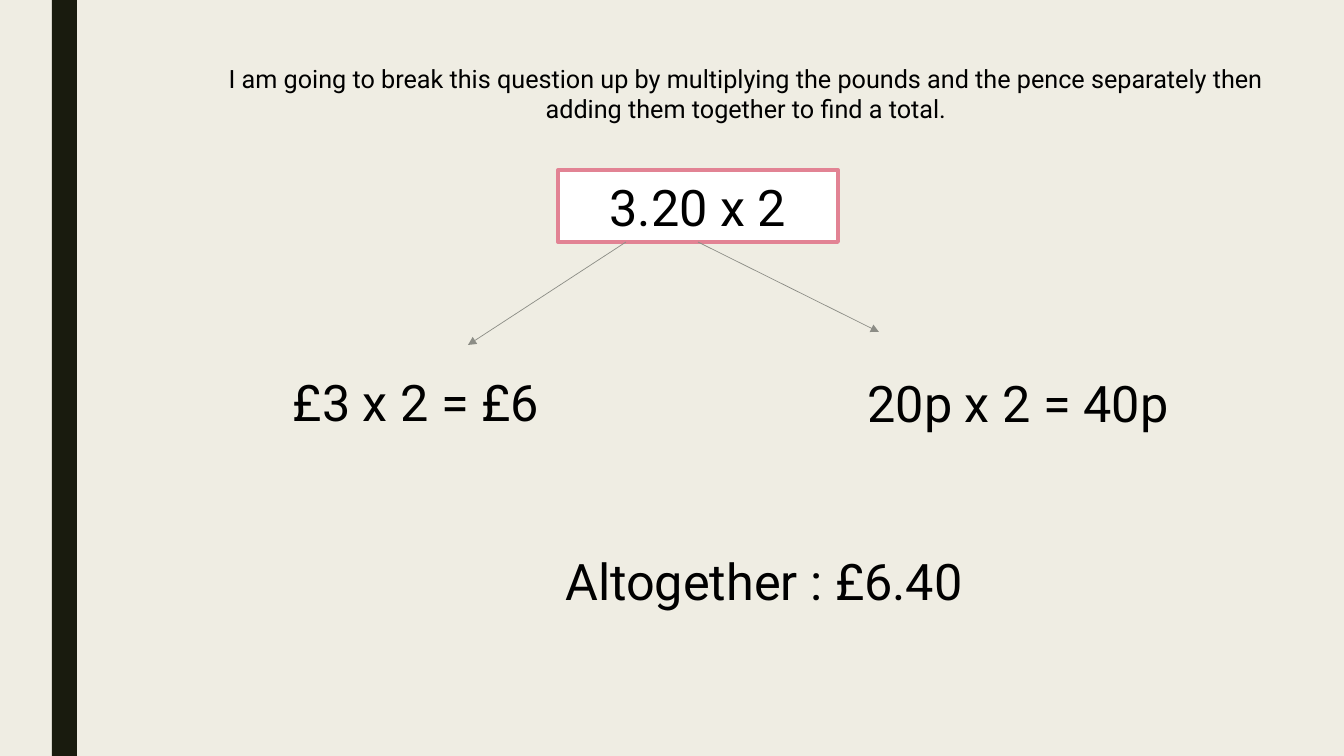
from lxml.etree import SubElement
from pptx import Presentation
from pptx.dml.color import RGBColor
from pptx.enum.shapes import MSO_CONNECTOR, MSO_SHAPE
from pptx.enum.text import MSO_ANCHOR, PP_ALIGN
from pptx.oxml.ns import qn
from pptx.util import Emu, Pt

SLIDE_W, SLIDE_H = 1344, 756
ROW_H = 72
FONT = "Roboto"


def px(n):
    return Emu(round(n * 914400 / 100.8))


def rgb(code):
    return RGBColor.from_string(code)


def add_rect(s, box, fill, line=None, width=0):
    sp = s.shapes.add_shape(MSO_SHAPE.RECTANGLE, *map(px, box))
    sp.shadow.inherit = False
    sp.fill.solid()
    sp.fill.fore_color.rgb = rgb(fill)
    if line:
        sp.line.color.rgb = rgb(line)
        sp.line.width = Pt(width)
    else:
        sp.line.fill.background()
    return sp


def write(sp, text, size, anchor=MSO_ANCHOR.TOP):
    tf = sp.text_frame
    tf.word_wrap = True
    tf.vertical_anchor = anchor
    p = tf.paragraphs[0]
    p.alignment = PP_ALIGN.CENTER
    r = p.add_run()
    r.text = text
    r.font.name = FONT
    r.font.size = Pt(size)
    r.font.color.rgb = rgb("000000")


def add_text(s, box, text, size=36):
    write(s.shapes.add_textbox(*map(px, box)), text, size)


def add_arrow(s, start, end):
    line = s.shapes.add_connector(MSO_CONNECTOR.STRAIGHT, *map(px, start + end))
    line.line.color.rgb = rgb("8C8D86")
    line.line.width = Pt(0.5)
    SubElement(line.line._get_or_add_ln(), qn("a:tailEnd"), type="triangle")
    SubElement(line._element.spPr, qn("a:effectLst"))


def add_background(s):
    s.background.fill.solid()
    s.background.fill.fore_color.rgb = rgb("EFEDE3")
    add_rect(s, (52, 0, 25, SLIDE_H), "191B0E")


def add_split(s, x, y, w):
    """Question box with an arrow down to each partial product."""
    question = add_rect(s, (x, y, w, ROW_H), "FFFFFF", "E28394", 2.75)
    write(question, "3.20 x 2", 36, MSO_ANCHOR.MIDDLE)
    bottom, middle = y + ROW_H, x + w // 2
    add_arrow(s, (middle - 72, bottom), (middle - 230, bottom + 103))
    add_arrow(s, (middle, bottom), (middle + 181, bottom + 90))
    add_text(s, (x - 310, y + 196, 336, ROW_H), "£3 x 2 = £6")
    add_text(s, (x + 292, y + 197, 336, ROW_H), "20p x 2 = 40p")


def build_slide(prs):
    s = prs.slides.add_slide(prs.slide_layouts[6])
    add_background(s)
    # Explanation
    add_text(s, (182, 58, 1128, ROW_H),
             "I am going to break this question up by multiplying the pounds "
             "and the pence separately then adding them together to find a total.", 18)
    # Working and total
    add_split(s, 558, 170, 280)
    add_text(s, (299, 545, 930, ROW_H), "Altogether : £6.40")


def main():
    prs = Presentation()
    prs.slide_width, prs.slide_height = px(SLIDE_W), px(SLIDE_H)
    build_slide(prs)
    prs.save("out.pptx")


if __name__ == "__main__":
    main()
